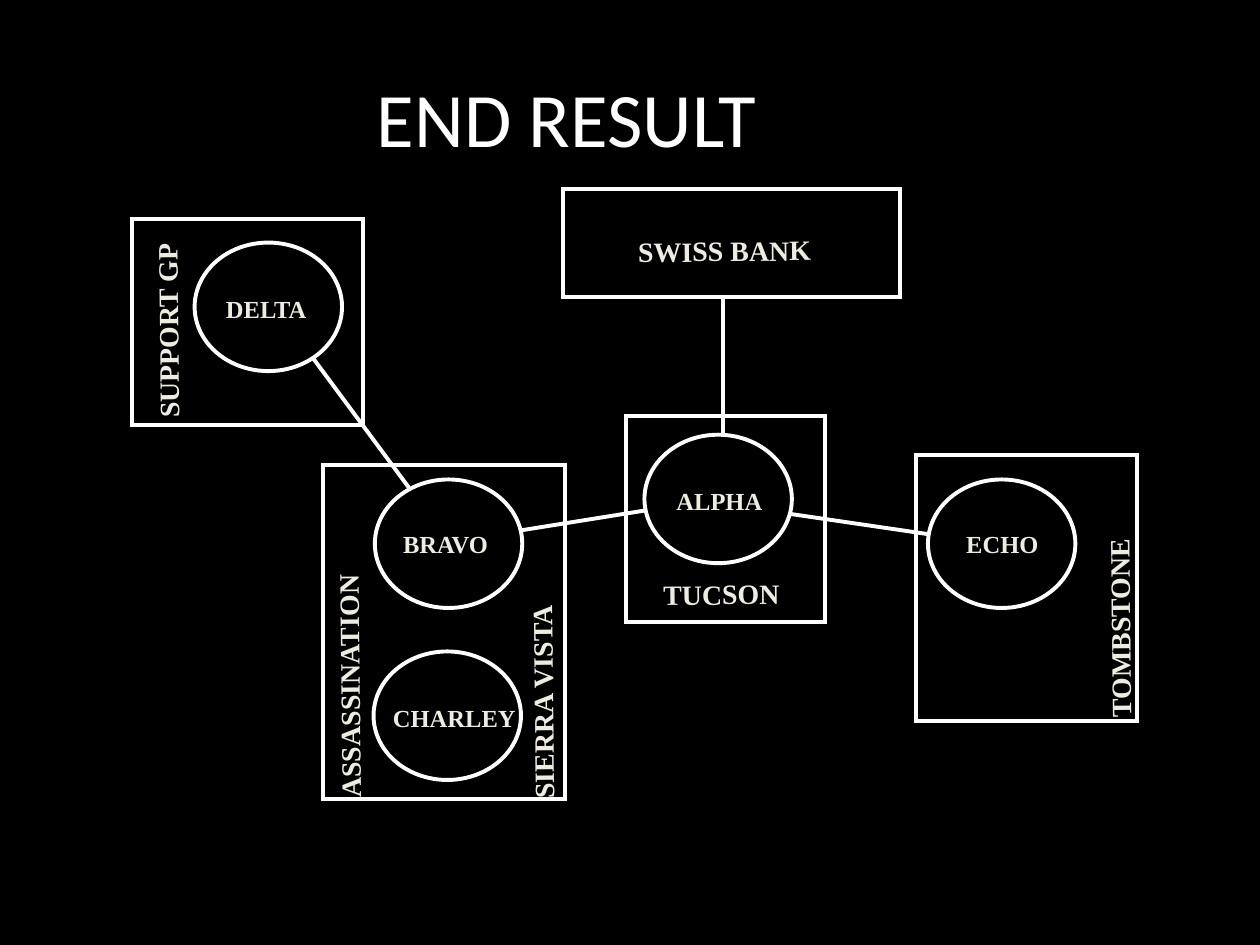
from dataclasses import dataclass

from lxml.etree import SubElement
from pptx import Presentation
from pptx.dml.color import RGBColor as Rgb
from pptx.enum.shapes import MSO_CONNECTOR as Conn, MSO_SHAPE as Kind
from pptx.enum.text import MSO_ANCHOR as Anchor, MSO_AUTO_SIZE as Fit, PP_ALIGN as Align
from pptx.oxml.ns import qn
from pptx.util import Inches, Pt


@dataclass(frozen=True)
class Theme:
    back: Rgb = Rgb(0, 0, 0)
    line: Rgb = Rgb(255, 255, 255)
    pale: Rgb = Rgb(0xEE, 0xEC, 0xE1)
    head: str = "Calibri"
    body: str = "Times New Roman"
    big: int = 44
    mid: int = 16
    small: int = 14
    width: float = 2.25


theme = Theme()
deck = Presentation()
deck.slide_width, deck.slide_height = Inches(10), Inches(7.5)
slide = deck.slides.add_slide(deck.slide_layouts[6])
slide.background.fill.solid()
slide.background.fill.fore_color.rgb = theme.back

# The grid has 100 columns and 75 rows.
COL = deck.slide_width / 100
ROW = deck.slide_height / 75


def place(x, y, w, h):
    """Turn grid columns and rows into slide lengths."""
    return round(x * COL), round(y * ROW), round(w * COL), round(h * ROW)


def write(text, box, size=theme.mid, font=theme.body, color=theme.pale, bold=True,
          turn=0, wrap=False, fit=Fit.SHAPE_TO_FIT_TEXT, align=Align.LEFT, anchor=Anchor.TOP):
    label = slide.shapes.add_textbox(*place(*box))
    label.rotation = turn
    frame = label.text_frame
    frame.word_wrap, frame.auto_size, frame.vertical_anchor = wrap, fit, anchor
    par = frame.paragraphs[0]
    par.text, par.alignment = text, align
    face = par.runs[0].font
    face.name, face.size, face.bold = font, Pt(size), bold
    face.color.rgb = color


write("END RESULT", (0, 3, 90, 12.5), size=theme.big, font=theme.head, color=theme.line,
      bold=False, wrap=True, fit=Fit.NONE, align=Align.CENTER, anchor=Anchor.MIDDLE)

# Cells: name, left and top of the circle, then the name's left, top and width
cells = [
    ("ALPHA", 51.15, 34.5, 52.7, 38.1, 8.9),
    ("BRAVO", 29.75, 38.05, 31, 41.5, 9.1),
    ("CHARLEY", 29.65, 51.7, 30.2, 55.3, 11.9),
    ("DELTA", 15.45, 19.25, 16.95, 22.85, 8.8),
    ("ECHO", 73.65, 38.05, 75.7, 41.5, 8.2),
]
rings = [(Kind.OVAL, (x, y, 11.7, 10.2)) for _, x, y, *_ in cells]

# Frames: support, assassination, Tombstone, bank, Tucson
frames = [(Kind.RECTANGLE, box) for box in (
    (10.5, 17.35, 18.3, 16.4),
    (25.65, 36.9, 19.2, 26.55),
    (72.7, 36.1, 17.55, 21.1),
    (44.65, 15, 26.75, 8.6),
    (49.7, 33, 15.8, 16.4),
)]
for kind, box in rings + frames:
    shape = slide.shapes.add_shape(kind, *place(*box))
    shape.shadow.inherit = False
    shape.fill.background()
    shape.line.color.rgb, shape.line.width = theme.line, Pt(theme.width)
    SubElement(shape._element.spPr.find(qn("a:ln")), qn("a:miter"), lim="800000")

for name, _, _, x, y, w in cells:
    write(name, (x, y, w, 3.3), size=theme.small)

# Links: Delta-Bravo, Bravo-Alpha, Alpha-Echo, bank-Alpha
links = [
    (24.9, 28.5, 32.45, 38.7),
    (41.3, 42.1, 51.3, 40.5),
    (62.8, 40.8, 73.7, 42.4),
    (57.35, 23.5, 57.35, 34.4),
]
for x, y, end, foot in links:
    start, top, right, low = place(x, y, end, foot)
    link = slide.shapes.add_connector(Conn.STRAIGHT, start, top, right, low)
    link.line.color.rgb, link.line.width = theme.line, Pt(theme.width)
    SubElement(link._element.spPr, qn("a:effectLst"))

# Places and roles: text, left, top, width, turn
flat, up = 359.4, 269.4
for text, x, y, w, turn in [
    ("SWISS BANK", 49.65, 18.05, 15.8, flat),
    ("SUPPORT GP", 5.3, 24.3, 16, up),
    ("ASSASSINATION", 17.75, 52.5, 19.9, up),
    ("SIERRA VISTA", 34.2, 53.7, 17.7, up),
    ("TUCSON", 51.65, 45.3, 11.8, flat),
    ("TOMBSTONE", 80.7, 47.95, 16.3, up),
]:
    write(text, (x, y, w, 3.7), turn=turn)

deck.save("out.pptx")
